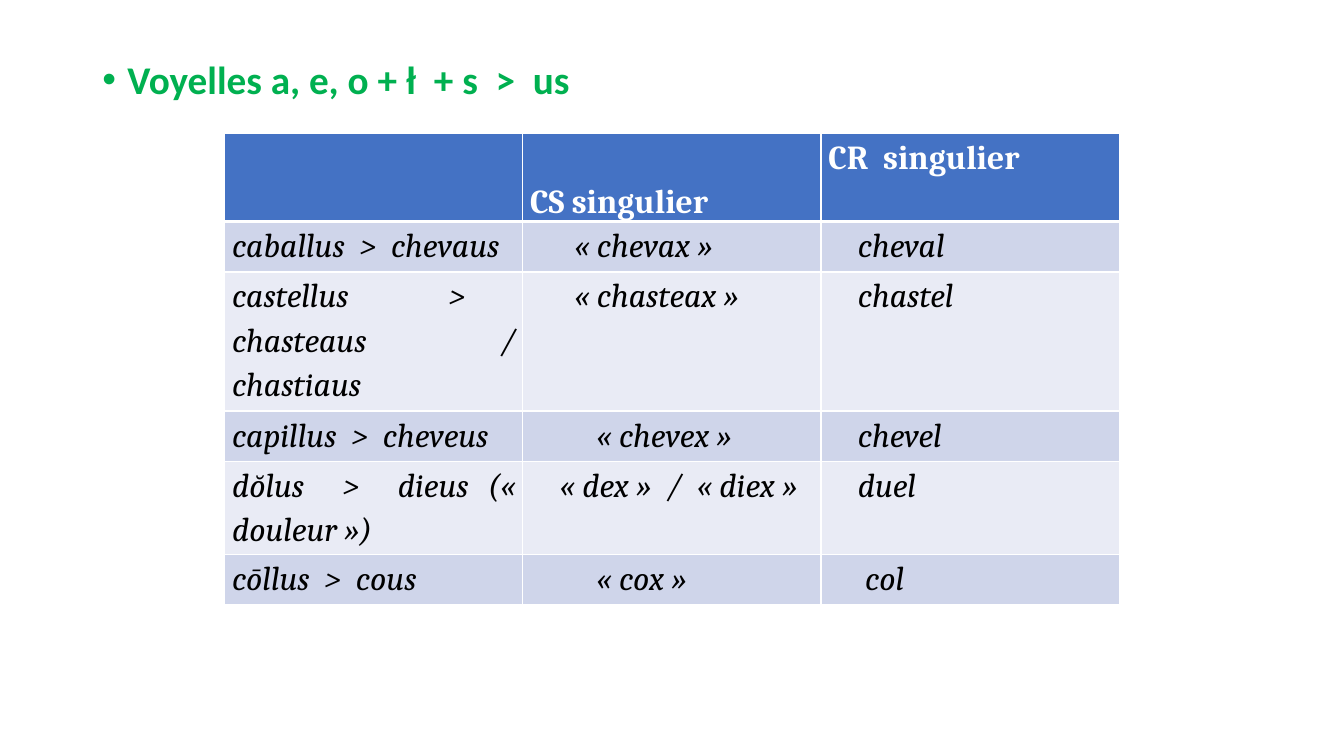
from lxml import etree
from pptx import Presentation
from pptx.dml.color import RGBColor
from pptx.enum.text import MSO_ANCHOR, PP_ALIGN
from pptx.oxml.ns import qn
from pptx.util import Pt

PX = 9525  # EMU per px, 96 px to the inch
JUSTIFY = PP_ALIGN.JUSTIFY
TOP, BOTTOM = MSO_ANCHOR.TOP, MSO_ANCHOR.BOTTOM

COLORS = {
    "rule": "00B050",
    "header": "4472C4",
    "odd": "CFD5EA",
    "even": "E9EBF5",
    "white": "FFFFFF",
    "black": "000000",
}

RULE = "Voyelles a, e, o + ł  + s  >  us"
HEADERS = ["", "CS singulier", "CR  singulier"]
# Each form: text and left indent in px
DECLENSIONS = [
    [("caballus  >  chevaus", 0), ("« chevax »", 42), ("cheval", 28)],
    [("castellus  >  chasteaus / chastiaus", 0), ("« chasteax »", 42), ("chastel", 28)],
    [("capillus  >  cheveus", 0), ("« chevex »", 63), ("chevel", 28)],
    [("dŏlus  >  dieus (« douleur »)", 0), ("« dex »  /  « diex »", 28), ("duel", 28)],
    [("cōllus  >  cous", 0), ("« cox »", 63), ("col", 35)],
]
ROW_HEIGHTS = [84, 48, 127, 48, 85, 48]


def rgb(name):
    return RGBColor.from_string(COLORS[name])


def set_indent(paragraph, left, first=0):
    properties = paragraph._p.get_or_add_pPr()
    properties.set("marL", str(left * PX))
    properties.set("indent", str(first * PX))
    return properties


def set_borders(cell, top, bottom):
    properties = cell._tc.get_or_add_tcPr()
    for side, points in (("L", 1), ("R", 1), ("T", top), ("B", bottom)):
        line = etree.SubElement(properties, qn(f"a:ln{side}"), w=str(Pt(points)))
        fill = etree.SubElement(line, qn("a:solidFill"))
        etree.SubElement(fill, qn("a:srgbClr"), val=COLORS["white"])


def add_rule(slide, left, top, width, height):
    box = slide.shapes.add_textbox(left * PX, top * PX, width * PX, height * PX)
    box.text_frame.word_wrap = True
    rule = box.text_frame.paragraphs[0]
    rule.text = RULE
    rule.line_spacing = 0.9
    rule.space_before = Pt(10)
    rule.font.name, rule.font.size, rule.font.bold = "Calibri", Pt(28), True
    rule.font.color.rgb = rgb("rule")
    # Bullet
    properties = set_indent(rule, 24, -24)
    etree.SubElement(properties, qn("a:buFont"), typeface="Arial")
    etree.SubElement(properties, qn("a:buChar"), char="•")


def fill_cell(cell, text, indent, row):
    is_header = row == 0
    set_borders(cell, 3 if row == 1 else 1, 3 if is_header else 1)
    cell.fill.solid()
    cell.fill.fore_color.rgb = rgb("header" if is_header else "odd" if row % 2 else "even")
    cell.margin_left = cell.margin_right = 7 * PX
    cell.margin_top = cell.margin_bottom = 0
    form = cell.text_frame.paragraphs[0]
    form.text = text
    form.alignment = JUSTIFY
    form.line_spacing = 1.15
    set_indent(form, indent)
    form.font.name, form.font.size = "Cambria", Pt(24)
    form.font.bold, form.font.italic = is_header, not is_header
    form.font.color.rgb = rgb("white" if is_header else "black")


def add_declensions(slide, left, top, width):
    rows = [[(header, 0) for header in HEADERS]] + DECLENSIONS
    table = slide.shapes.add_table(
        len(rows), len(HEADERS), left * PX, top * PX, width * PX, sum(ROW_HEIGHTS) * PX
    ).table
    for column in table.columns:
        column.width = width * PX // len(HEADERS)
    for row, forms in enumerate(rows):
        table.rows[row].height = ROW_HEIGHTS[row] * PX
        for column, (text, indent) in enumerate(forms):
            fill_cell(table.cell(row, column), text, indent, row)
            # The middle header sits at the foot of its cell
            table.cell(row, column).vertical_anchor = BOTTOM if (row, column) == (0, 1) else TOP


def main():
    presentation = Presentation()
    presentation.slide_width, presentation.slide_height = 1280 * PX, 720 * PX
    slide = presentation.slides.add_slide(presentation.slide_layouts[6])
    add_rule(slide, 88, 53, 1104, 596)
    add_declensions(slide, 214, 127, 852)
    presentation.save("out.pptx")


if __name__ == "__main__":
    main()
